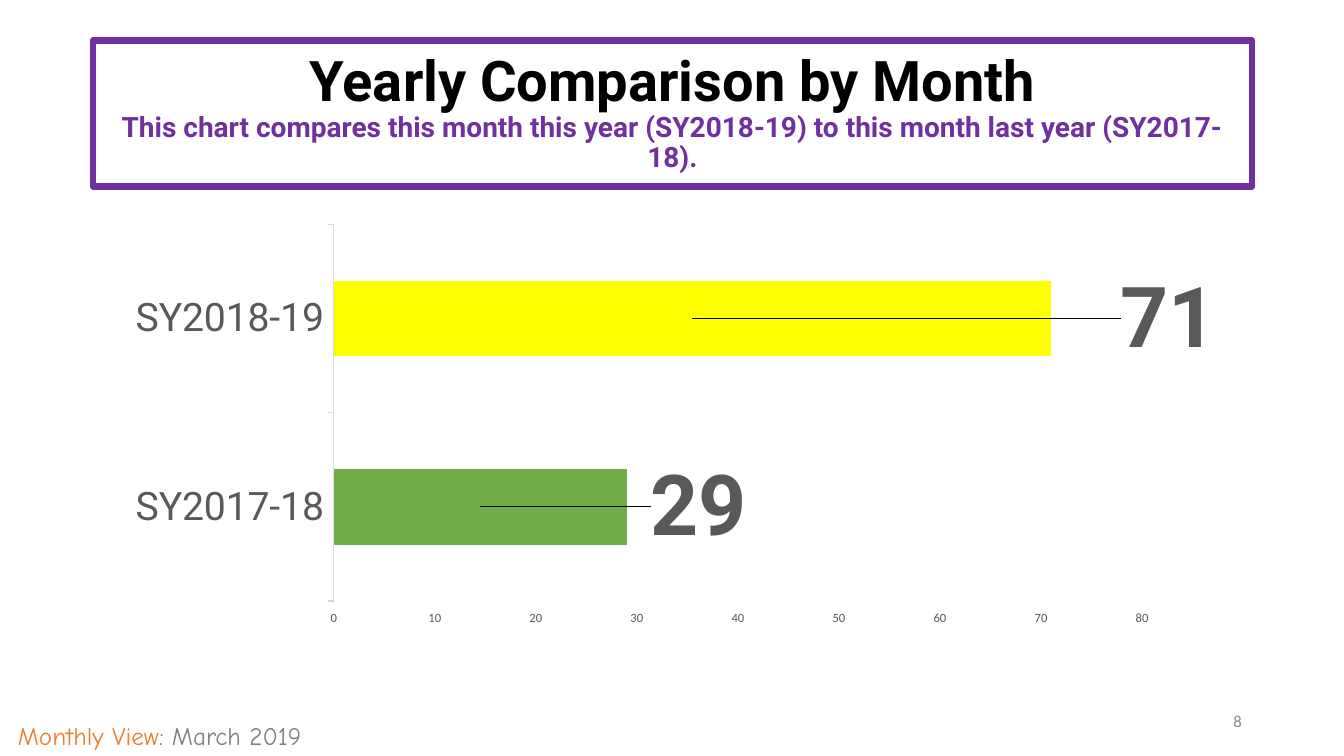
"""Build the yearly comparison slide with a two-bar chart."""
from dataclasses import dataclass

from lxml import etree
from pptx import Presentation
from pptx import util as u
from pptx.chart import data as cd
from pptx.dml.color import RGBColor
from pptx.enum import chart as ce
from pptx.enum import text as te
from pptx.oxml import ns


@dataclass(frozen=True)
class Theme:
    heading: str = "Roboto"
    body: str = "Calibri"
    script: str = "Comic Neue"
    black: str = "000000"
    purple: str = "7030A0"
    orange: str = "ED7D31"
    grey: str = "808080"
    number: str = "8C8C8C"
    label: str = "595959"
    axis: str = "D9D9D9"
    title_pt: int = 40
    subtitle_pt: int = 20
    category_pt: int = 28
    tick_pt: int = 9
    value_pt: int = 60
    footer_pt: int = 18
    number_pt: int = 12


@dataclass(frozen=True)
class Run:
    text: str
    name: str
    size: int
    color: str
    bold: bool = False


@dataclass(frozen=True)
class Note:
    box: tuple[float, float, float, float]
    runs: tuple[Run, ...]
    align: te.PP_ALIGN
    anchor: te.MSO_ANCHOR


@dataclass(frozen=True)
class Bar:
    year: str
    value: int
    color: str
    label_shift: float


T = Theme()
TITLE_BOX = (2.34, 1.02, 29.21, 3.68)
CHART_BOX = (3.18, 5.28, 27.53, 10.69)
PLOT = {"x": 0.19, "y": 0.036, "w": 0.74, "h": 0.887}
TITLE = (Run("Yearly Comparison by Month", T.heading, T.title_pt, T.black, True),
         Run("This chart compares this month this year (SY2018-19) to this month "
             "last year (SY2017-18).", T.heading, T.subtitle_pt, T.purple, True))
NOTES = (
    Note((23.93, 17.65, 7.62, 1.02), (Run("8", T.body, T.number_pt, T.number),),
         te.PP_ALIGN.RIGHT, te.MSO_ANCHOR.MIDDLE),
    Note((0.2, 18.03, 14.5, 1.02),
         (Run("Monthly View", T.script, T.footer_pt, T.orange),
          Run(": March 2019", T.script, T.footer_pt, T.grey)),
         te.PP_ALIGN.LEFT, te.MSO_ANCHOR.TOP),
)
BARS = (Bar("SY2017-18", 29, "70AD47", 0.2), Bar("SY2018-19", 71, "FFFF00", 0.436))


def assign(obj, values: dict) -> None:
    for key, value in values.items():
        setattr(obj, key, value)


def place(box: tuple) -> list:
    return [u.Cm(v) for v in box]


def style(font, name: str, size: int, color: str, bold: bool = False) -> None:
    assign(font, {"name": name, "size": u.Pt(size), "bold": bold})
    font.color.rgb = RGBColor.from_string(color)


def add_run(p, run: Run) -> None:
    r = p.add_run()
    r.text = run.text
    style(r.font, run.name, run.size, run.color, run.bold)


def add_title(s) -> None:
    sp = s.shapes.title
    assign(sp, dict(zip(("left", "top", "width", "height"), place(TITLE_BOX))))
    sp.line.color.rgb = RGBColor.from_string(T.purple)
    sp.line.width = u.Pt(4.5)
    tf = sp.text_frame
    assign(tf, {"word_wrap": True, "auto_size": te.MSO_AUTO_SIZE.NONE,
                "vertical_anchor": te.MSO_ANCHOR.MIDDLE})
    p = tf.paragraphs[0]
    assign(p, {"alignment": te.PP_ALIGN.CENTER, "line_spacing": 0.9})
    heading, subtitle = TITLE
    add_run(p, heading)
    p.add_line_break()
    add_run(p, subtitle)


def add_note(s, note: Note) -> None:
    tf = s.shapes.add_textbox(*place(note.box)).text_frame
    assign(tf, {"word_wrap": True, "vertical_anchor": note.anchor})
    p = tf.paragraphs[0]
    p.alignment = note.align
    for run in note.runs:
        add_run(p, run)


def make_layout(values: dict, inner: bool = False):
    layout = etree.Element(ns.qn("c:layout"))
    manual = etree.SubElement(layout, ns.qn("c:manualLayout"))
    modes = {"layoutTarget": "inner", "xMode": "edge", "yMode": "edge"} if inner else {}
    for tag, value in (modes | values).items():
        etree.SubElement(manual, ns.qn(f"c:{tag}")).set("val", str(value))
    return layout


def add_chart(s) -> None:
    data = cd.CategoryChartData()
    data.categories = [bar.year for bar in BARS]
    data.add_series("Series 1", [bar.value for bar in BARS])
    chart = s.shapes.add_chart(ce.XL_CHART_TYPE.BAR_STACKED, *place(CHART_BOX), data).chart
    assign(chart, {"has_legend": False, "has_title": False})
    style(chart.font, T.body, 10, T.black)
    plot = chart.plots[0]
    assign(plot, {"gap_width": 150, "overlap": 100, "vary_by_categories": False})

    cat, val = chart.category_axis, chart.value_axis
    for axis in (cat, val):
        assign(axis, {"has_major_gridlines": False,
                      "major_tick_mark": ce.XL_TICK_MARK.OUTSIDE})
    style(cat.tick_labels.font, T.heading, T.category_pt, T.label)
    cat.format.line.color.rgb = RGBColor.from_string(T.axis)
    cat.format.line.width = u.Pt(0.75)
    style(val.tick_labels.font, T.body, T.tick_pt, T.label)
    val.format.line.fill.background()
    assign(val, {"minimum_scale": 0, "maximum_scale": 80, "major_unit": 10})

    series = plot.series[0]
    for i, bar in enumerate(BARS):
        point = series.points[i]
        point.format.fill.solid()
        point.format.fill.fore_color.rgb = RGBColor.from_string(bar.color)
        style(point.data_label.font, T.heading, T.value_pt, T.label, True)

    root = chart.element if hasattr(chart, "element") else chart._chartSpace
    for idx, bar in zip(root.xpath(".//c:dLbl/c:idx"), BARS):
        idx.addnext(make_layout({"x": bar.label_shift, "y": 0}))
    area = root.xpath(".//c:plotArea")[0]
    for old in area.xpath("./c:layout"):
        area.remove(old)
    area.insert(0, make_layout(PLOT, inner=True))


def main() -> None:
    prs = Presentation()
    assign(prs, {"slide_width": u.Cm(33.87), "slide_height": u.Cm(19.05)})
    s = prs.slides.add_slide(prs.slide_layouts[5])
    add_title(s)
    add_chart(s)
    for note in NOTES:
        add_note(s, note)
    prs.save("out.pptx")


if __name__ == "__main__":
    main()
